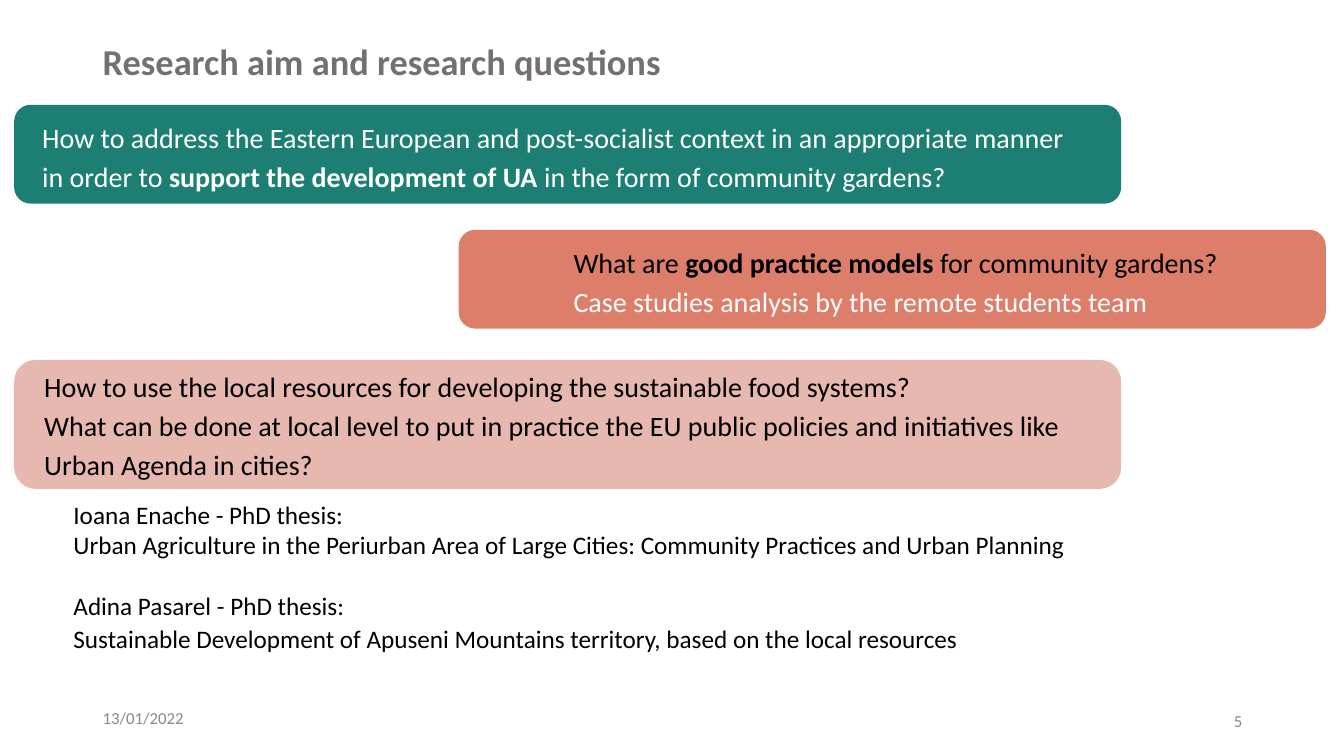
from dataclasses import dataclass

from pptx import Presentation
from pptx import util as u
from pptx.dml import color
from pptx.enum import shapes, text

COLORS = {
    "teal": "1D7E74",
    "coral": "DD7E6B",
    "pink": "E6B8AF",
    "title": "757070",
    "footer": "888888",
    "black": "000000",
    "white": "FFFFFF",
}


@dataclass(frozen=True)
class Run:
    text: str
    bold: bool = False


@dataclass(frozen=True)
class Para:
    runs: tuple[Run, ...]
    color: str = "black"
    before: float = 0
    margin: float = 0
    indent: float = 0


@dataclass(frozen=True)
class Band:
    left: float
    top: float
    width: float
    height: float
    fill: str


@dataclass(frozen=True)
class Label:
    left: float
    top: float
    width: float
    height: float
    paras: tuple[Para, ...]
    size: float = 20
    spacing: float = 1
    inset: float = 0.05
    middle: bool = False
    right: bool = False


def para(*runs: str | Run, **fmt) -> Para:
    return Para(tuple(Run(r) if isinstance(r, str) else r for r in runs), **fmt)


def rgb(name: str) -> color.RGBColor:
    return color.RGBColor.from_string(COLORS[name])


def add_band(s, band: Band) -> None:
    sp = s.shapes.add_shape(
        shapes.MSO_SHAPE.FLOWCHART_ALTERNATE_PROCESS,
        u.Inches(band.left), u.Inches(band.top),
        u.Inches(band.width), u.Inches(band.height),
    )
    sp.shadow.inherit = False
    sp.fill.solid()
    sp.fill.fore_color.rgb = rgb(band.fill)
    sp.line.fill.background()


def add_run(p, content: str, *, size: float, color: str, bold: bool) -> None:
    r = p.add_run()
    r.text = content
    r.font.name = "Calibri"
    r.font.size = u.Pt(size)
    r.font.bold = bold
    r.font.color.rgb = rgb(color)


def add_label(s, label: Label) -> None:
    sp = s.shapes.add_textbox(
        u.Inches(label.left), u.Inches(label.top),
        u.Inches(label.width), u.Inches(label.height),
    )
    tf = sp.text_frame
    tf.word_wrap = True
    tf.margin_left = tf.margin_right = u.Inches(0.1)
    tf.margin_top = tf.margin_bottom = u.Inches(label.inset)
    tf.vertical_anchor = text.MSO_ANCHOR.MIDDLE if label.middle else text.MSO_ANCHOR.TOP
    for i, item in enumerate(label.paras):
        p = tf.add_paragraph() if i else tf.paragraphs[0]
        pPr = p._p.get_or_add_pPr()
        pPr.set("marL", str(u.Inches(item.margin)))
        pPr.set("indent", str(u.Inches(item.indent)))
        p.alignment = text.PP_ALIGN.RIGHT if label.right else text.PP_ALIGN.LEFT
        p.line_spacing = label.spacing
        p.space_before = u.Pt(item.before)
        for run in item.runs:
            add_run(p, run.text, size=label.size, color=item.color, bold=run.bold)


BANDS = (
    Band(0.14, 1.04, 10.98, 0.98, "teal"),
    Band(4.55, 2.28, 8.6, 0.98, "coral"),
    Band(0.14, 3.57, 10.98, 1.28, "pink"),
)

LABELS = (
    Label(0.92, 0.4, 11.5, 0.47, (
        para(Run("Research aim and research questions", True), color="title"),
    ), size=26, spacing=0.9, middle=True),
    Label(0.32, 1.1, 10.55, 0.7, (
        para(
            "How to address the Eastern European and post-socialist context "
            "in an appropriate manner in order to ",
            Run("support the development of UA", True),
            " in the form of community gardens?",
            color="white",
        ),
    ), spacing=1.15),
    Label(5.59, 2.34, 7.56, 0.7, (
        para("What are ", Run("good practice models", True), " for community gardens?"),
        para("Case studies analysis by the remote students team", color="white"),
    ), spacing=1.15),
    Label(0.14, 3.52, 10.73, 1.31, (
        para("How to use the local resources for developing the sustainable food systems?",
             margin=0.2),
        para("What can be done at local level to put in practice the EU public policies "
             "and initiatives like Urban Agenda in cities?", margin=0.2),
    ), spacing=1.15, inset=0.1),
    Label(0.14, 4.85, 13, 1.75, (
        para("Ioana Enache - PhD thesis:", margin=0.49),
        para("Urban Agriculture in the Periurban Area of Large Cities: "
             "Community Practices and Urban Planning", margin=0.49),
        para("Adina Pasarel - PhD thesis:", before=22, indent=0.49),
        para("Sustainable Development of Apuseni Mountains territory, "
             "based on the local resources", before=2, indent=0.49),
    ), size=18, inset=0.1),
    Label(0.92, 6.92, 3, 0.4, (para("13/01/2022", color="footer"),),
          size=12, middle=True),
    Label(9.42, 6.95, 3, 0.4, (para("5", color="footer"),),
          size=12, middle=True, right=True),
)


def main() -> None:
    prs = Presentation()
    prs.slide_width, prs.slide_height = u.Inches(13.33), u.Inches(7.5)
    s = prs.slides.add_slide(prs.slide_layouts[6])
    for band in BANDS:
        add_band(s, band)
    for label in LABELS:
        add_label(s, label)
    prs.save("out.pptx")


if __name__ == "__main__":
    main()
